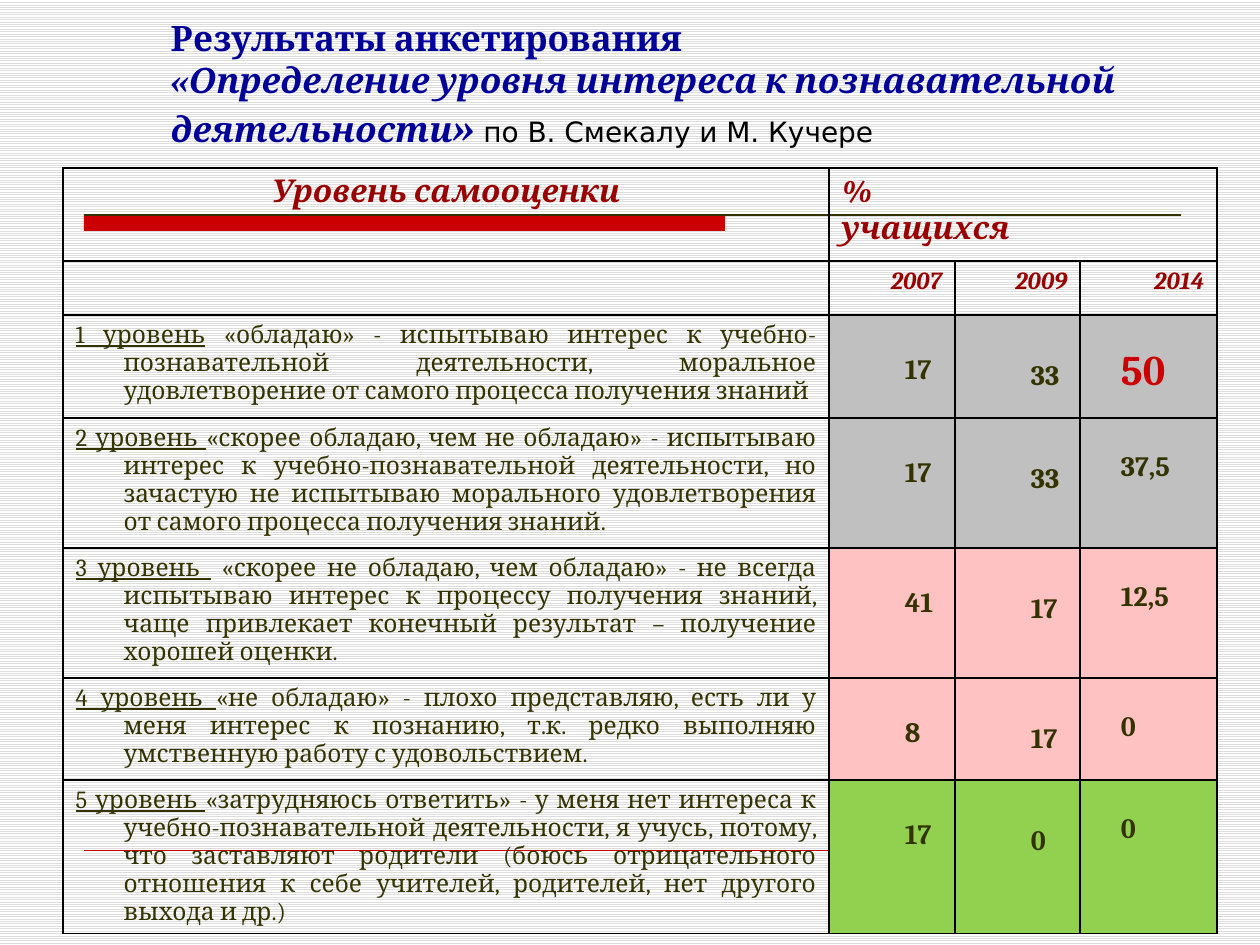
from dataclasses import dataclass

from lxml.etree import SubElement
from pptx import Presentation
from pptx.dml.color import RGBColor
from pptx.enum.dml import MSO_PATTERN
from pptx.enum.shapes import MSO_CONNECTOR, MSO_SHAPE
from pptx.enum.text import MSO_ANCHOR, MSO_AUTO_SIZE, PP_ALIGN
from pptx.oxml.ns import qn
from pptx.util import Emu, Pt


@dataclass(frozen=True)
class Theme:
    serif: str = "Cambria"
    sans: str = "DejaVu Sans"
    title: str = "000099"
    heading: str = "990000"
    text: str = "333300"
    accent: str = "CC0000"
    black: str = "000000"
    white: str = "FFFFFF"
    stripe: str = "DDDDDD"
    high: str = "C0C0C0"
    low: str = "FFC2C2"
    unsure: str = "92D050"
    body_size: int = 14
    value_size: int = 16
    author_size: int = 16
    heading_size: int = 18
    title_size: int = 20
    large_size: int = 24


def px(length):
    return Emu(round(length * 914400 / 126))


def color(value):
    return RGBColor.from_string(value)


class SlideBuilder:
    def __init__(self, slide, theme):
        self.slide = slide
        self.theme = theme

    def background(self):
        fill = self.slide.background.fill
        fill.patterned()
        fill.pattern = MSO_PATTERN.LIGHT_HORIZONTAL
        fill.fore_color.rgb = color(self.theme.stripe)
        fill.back_color.rgb = color(self.theme.white)

    def bar(self, left, top, width, height, fill):
        bar = self.slide.shapes.add_shape(
            MSO_SHAPE.RECTANGLE, px(left), px(top), px(width), px(height))
        bar.shadow.inherit = False
        bar.fill.solid()
        bar.fill.fore_color.rgb = color(fill)
        bar.line.fill.background()

    def rule(self, left, right, y, line, weight):
        rule = self.slide.shapes.add_connector(
            MSO_CONNECTOR.STRAIGHT, px(left), px(y), px(right), px(y))
        rule.line.color.rgb = color(line)
        rule.line.width = Pt(weight)
        SubElement(rule._element.spPr, qn("a:effectLst"))

    def style(self, font, size, ink, bold=False, italic=False, name=None):
        font.name = name or self.theme.serif
        font.size = Pt(size)
        font.bold = bold
        font.italic = italic
        font.color.rgb = color(ink)

    def title(self, left, top, width, height, lines):
        box = self.slide.shapes.title
        box.left, box.top, box.width, box.height = map(px, (left, top, width, height))
        frame = box.text_frame
        frame.auto_size = MSO_AUTO_SIZE.NONE
        frame.vertical_anchor = MSO_ANCHOR.BOTTOM
        para = frame.paragraphs[0]
        para.alignment = PP_ALIGN.LEFT
        for number, line in enumerate(lines):
            if number:
                para.add_line_break()
            for text, look in line:
                span = para.add_run()
                span.text = text
                self.style(span.font, **look)

    def table(self, left, top, widths, heights):
        table = self.slide.shapes.add_table(
            len(heights), len(widths), px(left), px(top),
            px(sum(widths)), px(sum(heights))).table
        table.first_row = table.horz_banding = False
        for column, width in zip(table.columns, widths):
            column.width = px(width)
        for row, height in zip(table.rows, heights):
            row.height = px(height)
        for cell in table.iter_cells():
            self.borders(cell)
            cell.fill.background()
        return table

    def borders(self, cell):
        properties = cell._tc.get_or_add_tcPr()
        for side in ("a:lnL", "a:lnR", "a:lnT", "a:lnB"):
            line = SubElement(properties, qn(side), w=str(Pt(1)))
            fill = SubElement(line, qn("a:solidFill"))
            SubElement(fill, qn("a:srgbClr"), val=self.theme.black)

    def paragraph(self, para, spans, look, align=PP_ALIGN.LEFT, margin=48, indent=-48):
        para.alignment = align
        properties = para._p.get_or_add_pPr()
        properties.set("marL", str(px(margin)))
        properties.set("indent", str(px(indent)))
        self.style(para.font, **look)
        for text, underline in spans:
            span = para.add_run()
            span.text = text
            if underline:
                span.font.underline = True

    def cell(self, cell, lines, look, **layout):
        frame = cell.text_frame
        for number, spans in enumerate(lines):
            para = frame.add_paragraph() if number else frame.paragraphs[0]
            self.paragraph(para, spans, look, **layout)

    def value(self, cell, text, look, fill, top, side, indent):
        cell.margin_top = px(top)
        cell.margin_left = cell.margin_right = px(side)
        cell.fill.solid()
        cell.fill.fore_color.rgb = color(fill)
        self.cell(cell, [[(text, False)]], look, margin=0, indent=indent)


def main():
    theme = Theme()
    deck = Presentation()
    deck.slide_width, deck.slide_height = px(1260), px(945)
    page = SlideBuilder(deck.slides.add_slide(deck.slide_layouts[5]), theme)

    # Background and decorative rules
    page.background()
    page.bar(84, 215, 641, 16, theme.accent)
    page.rule(84, 1181, 215, theme.text, 0.75)
    page.rule(84, 1176, 850, theme.accent, 0.25)

    # Title
    plain = dict(size=theme.title_size, ink=theme.title, bold=True)
    slanted = dict(plain, italic=True)
    author = dict(size=theme.author_size, ink=theme.black, name=theme.sans)
    page.title(158, 21, 1040, 136, [
        [("Результаты анкетирования", plain)],
        [("«Определение уровня интереса к познавательной деятельности", slanted),
         ("» ", dict(slanted, size=theme.large_size)),
         ("по В. Смекалу и М. Кучере", author)],
    ])

    # Table headings
    table = page.table(63, 168, (766, 126, 125, 137), (93, 54, 103, 130, 130, 102, 132))
    heading = dict(size=theme.heading_size, ink=theme.heading, bold=True, italic=True)
    table.cell(0, 1).merge(table.cell(0, 3))
    page.cell(table.cell(0, 0), [[("Уровень самооценки", False)]], heading,
              align=PP_ALIGN.CENTER)
    page.cell(table.cell(0, 1), [[("%", False)], [("учащихся", False)]], heading)
    for column, year in enumerate(("2007", "2009", "2014"), start=1):
        page.cell(table.cell(1, column), [[(year, False)]],
                  dict(heading, size=theme.body_size), align=PP_ALIGN.RIGHT)

    # Levels and shares of pupils
    levels = [
        ("1 уровень", " «обладаю» - испытываю интерес к учебно-познавательной деятельности, "
         "моральное удовлетворение от самого процесса получения знаний",
         ("17", "33", "50"), theme.high),
        ("2 уровень ", "«скорее обладаю, чем не обладаю» - испытываю интерес к "
         "учебно-познавательной деятельности, но зачастую не испытываю морального "
         "удовлетворения от самого процесса получения знаний.",
         ("17", "33", "37,5"), theme.high),
        ("3 уровень ", " «скорее не обладаю, чем обладаю» - не всегда испытываю интерес к "
         "процессу получения знаний, чаще привлекает конечный результат – получение "
         "хорошей оценки.", ("41", "17", "12,5"), theme.low),
        ("4 уровень ", "«не обладаю» - плохо представляю, есть ли у меня интерес к "
         "познанию, т.к. редко выполняю умственную работу с удовольствием.",
         ("8", "17", "0"), theme.low),
        ("5 уровень ", "«затрудняюсь ответить» - у меня нет интереса к "
         "учебно-познавательной деятельности, я учусь, потому, что заставляют родители "
         "(боюсь отрицательного отношения к себе учителей, родителей, нет другого выхода "
         "и др.)", ("17", "0", "0"), theme.unsure),
    ]
    body = dict(size=theme.body_size, ink=theme.text)
    number = dict(size=theme.value_size, ink=theme.text, bold=True)
    peak = dict(number, size=theme.large_size, ink=theme.accent)
    placements = ((39, 13, 63), (45, 13, 63), (33, 9, 32))  # top, side, indent
    for row, (level, description, shares, fill) in enumerate(levels, start=2):
        page.cell(table.cell(row, 0), [[(level, True), (description, False)]], body,
                  align=PP_ALIGN.JUSTIFY)
        for column, (share, placement) in enumerate(zip(shares, placements), start=1):
            look = peak if share == "50" else number
            page.value(table.cell(row, column), share, look, fill, *placement)

    deck.save("out.pptx")


if __name__ == "__main__":
    main()
